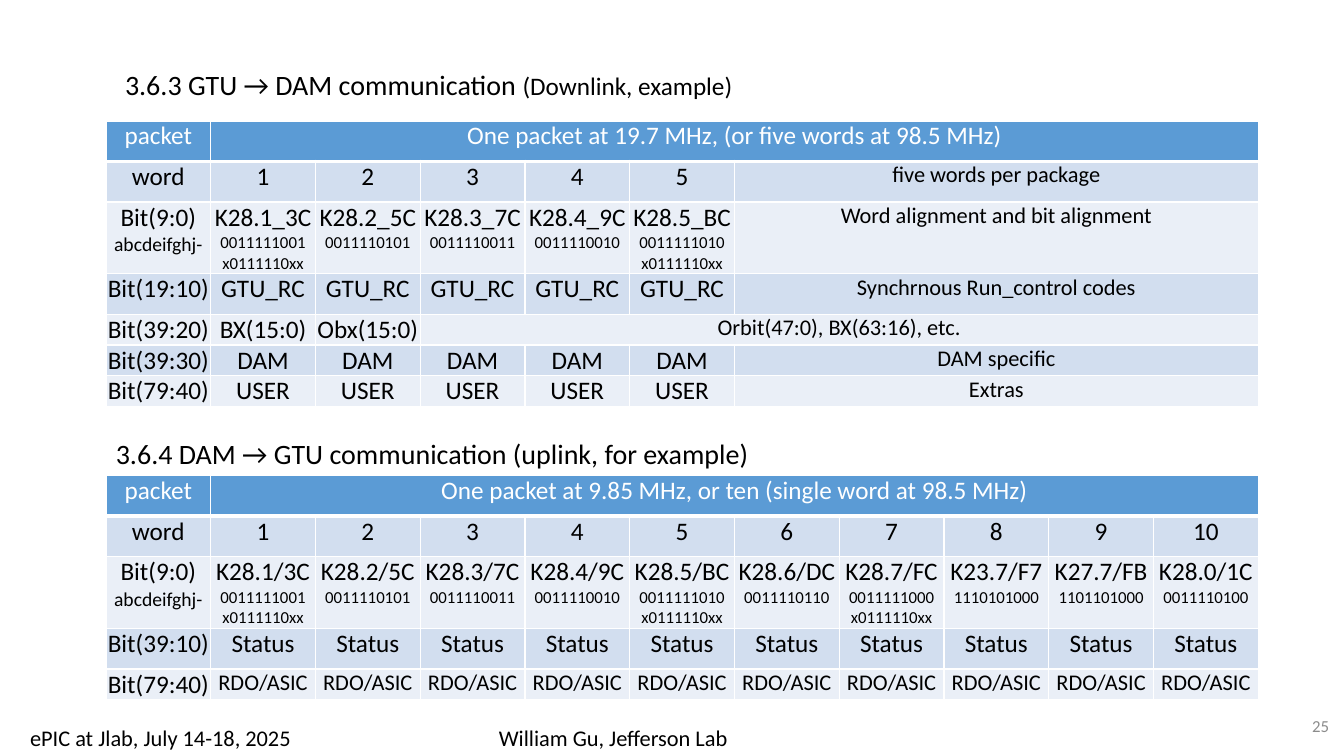
from dataclasses import dataclass

from lxml.etree import SubElement
from pptx import Presentation
from pptx.dml.color import RGBColor
from pptx.enum.text import MSO_ANCHOR as Anchor, MSO_AUTO_SIZE as AutoSize, PP_ALIGN as Align
from pptx.oxml.ns import qn
from pptx.util import Inches, Pt


@dataclass(frozen=True)
class Theme:
    font: str = "Calibri"
    black: str = "000000"
    white: str = "FFFFFF"
    grey: str = "8C8C8C"
    header: str = "5B9BD5"
    bands: tuple = ("EAEFF7", "D2DEEF")
    heading: int = 20
    body: int = 18
    note: int = 16
    bit_order: int = 14
    code: int = 12
    thin: int = 1
    thick: int = 3


THEME = Theme()
WIDTH, HEIGHT = Inches(13.33), Inches(7.5)
ROW_UNIT = HEIGHT * 1.34 / 100
TABLE_LEFT, TABLE_WIDTH = 7.88, 85.75


def share(left, top, width, height):
    return tuple(round(part * whole / 100) for part, whole in
                 zip((left, top, width, height), (WIDTH, HEIGHT, WIDTH, HEIGHT)))


def write(para, text, *, size=THEME.body, color=THEME.black, align=Align.LEFT):
    para.alignment = align
    span = para.add_run()
    span.text = text
    span.font.name = THEME.font
    span.font.size = Pt(size)
    span.font.color.rgb = RGBColor.from_string(color)


def word(text, *codes, code_size=THEME.code):
    return [(text, THEME.body), *((code, code_size) for code in codes)]


def note(text):
    return [(text, THEME.note)]


def add_text(page, area, text, *, wrap=False, anchor=Anchor.TOP, **style):
    box = page.shapes.add_textbox(*share(*area))
    box.text_frame.word_wrap = wrap
    box.text_frame.vertical_anchor = anchor
    write(box.text_frame.paragraphs[0], text, **style)


def add_title(page, area, parts):
    title = page.shapes.title
    title.left, title.top, title.width, title.height = share(*area)
    frame = title.text_frame
    frame.word_wrap = False
    frame.auto_size = AutoSize.NONE
    frame.vertical_anchor = Anchor.TOP
    for text, size in parts:
        write(frame.paragraphs[0], text, size=size)


def set_borders(cell, bottom):
    properties = cell._tc.get_or_add_tcPr()
    for side, points in (("L", THEME.thin), ("R", THEME.thin), ("T", THEME.thin), ("B", bottom)):
        line = SubElement(properties, qn(f"a:ln{side}"), w=str(Pt(points)))
        SubElement(SubElement(line, qn("a:solidFill")), qn("a:srgbClr"), val=THEME.white)


def format_cell(cell, row_index):
    is_header = row_index == 0
    set_borders(cell, THEME.thick if is_header else THEME.thin)
    fill = THEME.header if is_header else THEME.bands[row_index % 2]
    cell.fill.solid()
    cell.fill.fore_color.rgb = RGBColor.from_string(fill)
    cell.margin_left = cell.margin_right = cell.margin_top = cell.margin_bottom = 0


def fill_cell(cell, lines, color):
    frame = cell.text_frame
    for index, (text, size) in enumerate(lines):
        para = frame.add_paragraph() if index else frame.paragraphs[0]
        write(para, text, size=size, color=color, align=Align.CENTER)


def add_packet_table(page, top, column_units, rows):
    left, top, width, _ = share(TABLE_LEFT, top, TABLE_WIDTH, 0)
    height = round(ROW_UNIT * sum(units for units, _ in rows))
    table = page.shapes.add_table(len(rows), len(column_units), left, top, width, height).table
    table.first_row = table.horz_banding = False
    for column, units in zip(table.columns, column_units):
        column.width = round(width * units / sum(column_units))
    last = len(column_units) - 1
    for row_index, (units, cells) in enumerate(rows):
        table.rows[row_index].height = round(ROW_UNIT * units)
        for cell in table.rows[row_index].cells:
            format_cell(cell, row_index)
        if len(cells) <= last:
            table.cell(row_index, len(cells) - 1).merge(table.cell(row_index, last))
        for column_index, lines in enumerate(cells):
            color = THEME.black if row_index else THEME.white
            fill_cell(table.cell(row_index, column_index), lines, color)


def add_downlink(page):
    add_title(page, (8.55, 8.27, 48.24, 5.87),
              [("3.6.3 GTU → DAM communication ", THEME.heading),
               ("(Downlink, example)", THEME.body)])
    add_packet_table(page, 16, [1] * 6 + [5], [
        (4, [word("packet"), word("One packet at 19.7 MHz, (or five words at 98.5 MHz)")]),
        (4, [word("word"), *(word(str(number)) for number in range(1, 6)),
             note("five words per package")]),
        (7, [BIT_LABEL,
             word("K28.1_3C", "0011111001", "x0111110xx"),
             word("K28.2_5C", "0011110101"),
             word("K28.3_7C", "0011110011"),
             word("K28.4_9C", "0011110010"),
             word("K28.5_BC", "0011111010 x0111110xx"),
             note("Word alignment and bit alignment")]),
        (4, [word("Bit(19:10)"), *[word("GTU_RC")] * 5, note("Synchrnous Run_control codes")]),
        (3, [word("Bit(39:20)"), word("BX(15:0)"), word("Obx(15:0)"),
             note("Orbit(47:0), BX(63:16), etc.")]),
        (3, [word("Bit(39:30)"), *[word("DAM")] * 5, note("DAM specific")]),
        (3, [word("Bit(79:40)"), *[word("USER")] * 5, note("Extras")]),
    ])


def add_uplink(page):
    add_packet_table(page, 62.93, [1] * 11, [
        (4, [word("packet"), word("One packet at 9.85 MHz, or ten (single word at 98.5 MHz)")]),
        (4, [word("word"), *(word(str(number)) for number in range(1, 11))]),
        (7, [BIT_LABEL,
             word("K28.1/3C", "0011111001", "x0111110xx"),
             word("K28.2/5C", "0011110101"),
             word("K28.3/7C", "0011110011"),
             word("K28.4/9C", "0011110010"),
             word("K28.5/BC", "0011111010 x0111110xx"),
             word("K28.6/DC", "0011110110"),
             word("K28.7/FC", "0011111000 x0111110xx"),
             word("K23.7/F7", "1110101000"),
             word("K27.7/FB", "1101101000"),
             word("K28.0/1C", "0011110100")]),
        (4, [word("Bit(39:10)"), *[word("Status")] * 10]),
        (3, [word("Bit(79:40)"), *[note("RDO/ASIC")] * 10]),
    ])
    add_text(page, (7.88, 57.07, 49.66, 5.87),
             "3.6.4 DAM → GTU communication (uplink, for example)", size=THEME.heading)


def add_footer(page):
    add_text(page, (1.5, 95.07, 21.16, 4.93), "ePIC at Jlab, July 14-18, 2025", size=THEME.note)
    add_text(page, (36.38, 95.07, 18.75, 4.93), "William Gu, Jefferson Lab", size=THEME.note)
    add_text(page, (77.12, 93.33, 22.51, 5.33), "25", wrap=True, anchor=Anchor.MIDDLE,
             size=THEME.code, color=THEME.grey, align=Align.RIGHT)


BIT_LABEL = word("Bit(9:0)", "abcdeifghj-", code_size=THEME.bit_order)


def main():
    deck = Presentation()
    deck.slide_width, deck.slide_height = WIDTH, HEIGHT
    page = deck.slides.add_slide(deck.slide_layouts.get_by_name("Title Only"))
    add_downlink(page)
    add_uplink(page)
    add_footer(page)
    deck.save("out.pptx")


if __name__ == "__main__":
    main()
